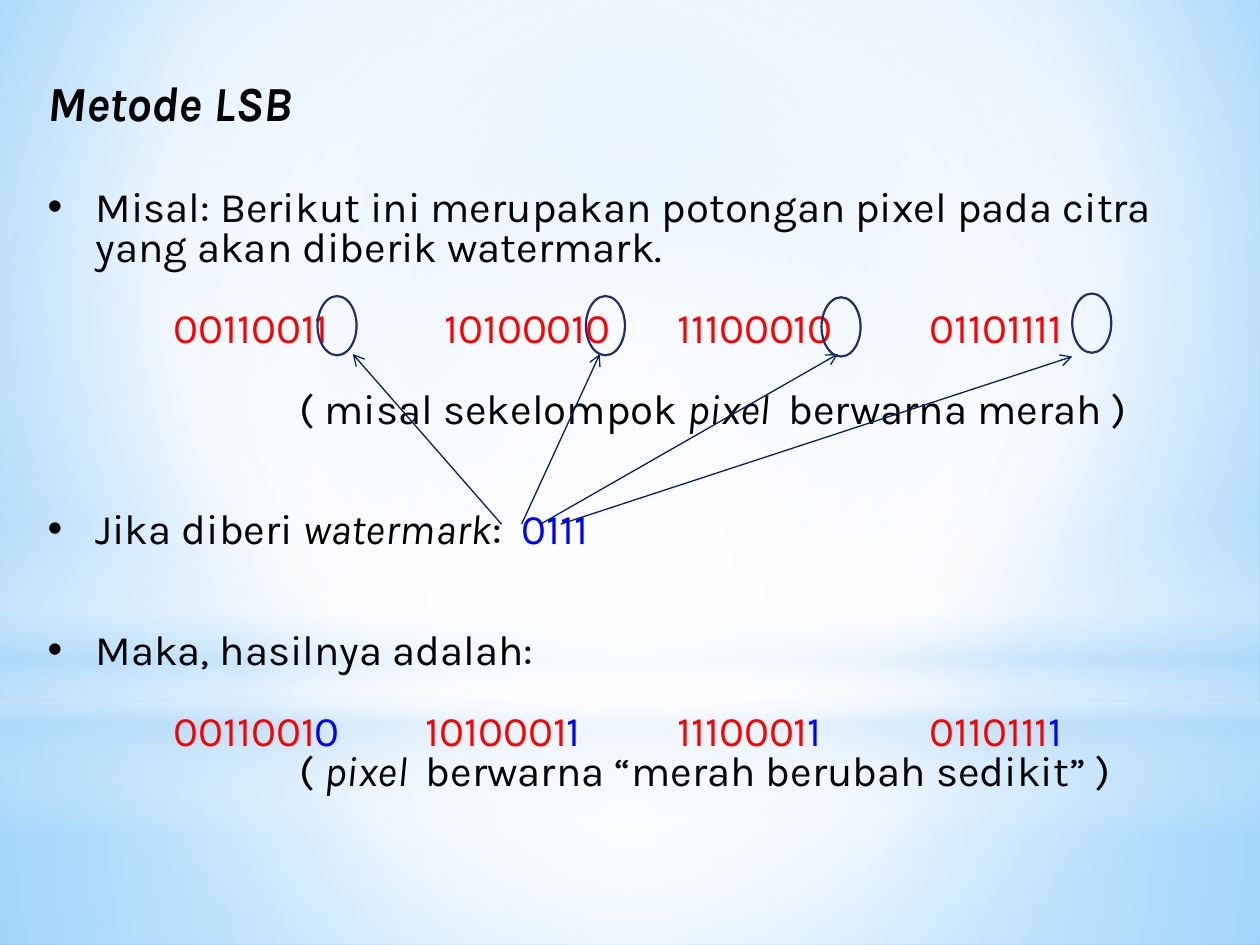
from dataclasses import dataclass, field
from typing import NamedTuple

from lxml import etree
from pptx import Presentation
from pptx import util as u
from pptx.dml.color import RGBColor
from pptx.enum import shapes, text
from pptx.oxml import ns

COLUMNS, ROWS = 10, 7.5
CELL = u.Inches(1)


@dataclass(frozen=True)
class Theme:
    font: str = "Karla"
    title: int = 28
    body: int = 24
    leading: float = 0.8
    title_gap: float = 33.5
    line_gap: float = 23
    black: str = "000000"
    red: str = "FF0000"
    blue: str = "0000FF"
    arrow: str = "002060"
    ring: str = "1F2E69"
    white: str = "FFFFFF"
    haze: str = "B4DCFA"


THEME = Theme()


class Area(NamedTuple):
    column: float
    row: float
    columns: float
    rows: float

    def lengths(self) -> list[int]:
        return [round(value * CELL) for value in self]


class Stop(NamedTuple):
    place: int
    color: str
    alpha: int = 100


class Glow(NamedTuple):
    area: Area
    stops: list[Stop]
    kind: shapes.MSO_SHAPE = shapes.MSO_SHAPE.RECTANGLE
    angle: int | None = None


class Span(NamedTuple):
    words: str
    color: str = THEME.black
    italic: bool = False
    bold: bool = False
    size: int = THEME.body


@dataclass
class Para:
    spans: list[Span]
    gap: float = 0
    leading: float = THEME.leading
    bullet: bool = False
    indent: float = 0
    tabs: list[float] = field(default_factory=list)


class Target(NamedTuple):
    ring: tuple[float, float]
    start: float
    tip: tuple[float, float]


def child(parent, tag: str, **attributes):
    values = {name: str(value) for name, value in attributes.items()}
    return etree.SubElement(parent, ns.qn(tag), values)


def apply(target, values: dict) -> None:
    for name, value in values.items():
        setattr(target, name, value)


def paint_gradient(element, stops: list[Stop], angle: int | None = None,
                   focus: tuple = (50, 50, 50, 50)) -> None:
    solid = next(element.iter(ns.qn("a:solidFill")))
    gradient = etree.Element(ns.qn("a:gradFill"), rotWithShape="1")
    stop_list = child(gradient, "a:gsLst")
    for stop in stops:
        mark = child(stop_list, "a:gs", pos=stop.place * 1000)
        color = child(mark, "a:srgbClr", val=stop.color)
        if stop.alpha < 100:
            child(color, "a:alpha", val=stop.alpha * 1000)
    if angle is None:
        sides = {side: share * 1000 for side, share in zip("ltrb", focus)}
        child(child(gradient, "a:path", path="circle"), "a:fillToRect", **sides)
    else:
        child(gradient, "a:lin", ang=angle * 60000, scaled=0)
    solid.getparent().replace(solid, gradient)


def draw_glow(page, glow: Glow) -> None:
    shape = page.shapes.add_shape(glow.kind, *glow.area.lengths())
    shape.shadow.inherit = False
    shape.line.fill.background()
    shape.fill.solid()
    paint_gradient(shape.element, glow.stops, glow.angle)


def write_para(para, item: Para) -> None:
    apply(para, {"line_spacing": item.leading, "space_before": u.Pt(item.gap)})
    props = para._p.get_or_add_pPr()
    if item.bullet:
        hang = u.Inches(0.38)
        props.set("marL", str(hang))
        props.set("indent", str(-hang))
        child(props, "a:buFont", typeface="Arial")
        child(props, "a:buChar", char="•")
    elif item.indent:
        props.set("marL", str(u.Inches(item.indent)))
        props.set("indent", "0")
    if item.tabs:
        tab_list = child(props, "a:tabLst")
        for tab in item.tabs:
            child(tab_list, "a:tab", pos=u.Inches(tab), algn="l")
    for span in item.spans:
        run = para.add_run()
        run.text = span.words
        apply(run.font, {"name": THEME.font, "size": u.Pt(span.size),
                         "bold": span.bold, "italic": span.italic})
        run.font.color.rgb = RGBColor.from_string(span.color)


def draw_text(page, area: Area, items: list[Para]) -> None:
    frame = page.shapes.add_textbox(*area.lengths()).text_frame
    apply(frame, {"word_wrap": True, "auto_size": text.MSO_AUTO_SIZE.NONE,
                  "vertical_anchor": text.MSO_ANCHOR.TOP})
    for index, item in enumerate(items):
        write_para(frame.add_paragraph() if index else frame.paragraphs[0], item)


def draw_arrow(page, target: Target) -> None:
    ends = [round(value * CELL) for value in (target.start, 4.16, *target.tip)]
    arrow = page.shapes.add_connector(shapes.MSO_CONNECTOR.STRAIGHT, *ends)
    arrow.line.width = u.Pt(0.75)
    arrow.line.color.rgb = RGBColor.from_string(THEME.arrow)
    child(arrow.line._get_or_add_ln(), "a:tailEnd", type="arrow")
    child(arrow.element.spPr, "a:effectLst")


def draw_ring(page, target: Target) -> None:
    area = Area(*target.ring, 0.31, 0.47)
    ring = page.shapes.add_shape(shapes.MSO_SHAPE.OVAL, *area.lengths())
    ring.shadow.inherit = False
    ring.fill.background()
    ring.line.width = u.Pt(1.25)
    ring.line.color.rgb = RGBColor.from_string(THEME.ring)


def result_spans(codes: list[str]) -> list[Span]:
    return [span for code in codes
            for span in (Span("\t" + code[:-1], THEME.red), Span(code[-1], THEME.blue))]


W, H = THEME.white, THEME.haze
GLOWS = [
    Glow(Area(0, 5.58, COLUMNS, 1.92), [Stop(0, W, 91), Stop(37, W, 76), Stop(100, H, 79)]),
    Glow(Area(0, 0, COLUMNS, 5.58), [Stop(0, W, 89), Stop(48, W, 62), Stop(100, H, 79)]),
    Glow(Area(0, 4.12, COLUMNS, 2.5), [Stop(0, W, 0), Stop(29, W, 30), Stop(45, H, 40),
                                       Stop(55, W, 26), Stop(65, H, 60), Stop(100, W, 0)], angle=90),
    Glow(Area(0, 1.75, COLUMNS, 5.58), [Stop(0, W), Stop(56, W, 0)], shapes.MSO_SHAPE.OVAL),
]
GAP = THEME.line_gap
PARAS = [
    Para([Span("Metode LSB", italic=True, bold=True, size=THEME.title)], leading=1.0),
    Para([Span("Misal: Berikut ini merupakan potongan pixel pada citra yang akan diberik watermark.")],
         THEME.title_gap, bullet=True),
    Para([Span("\t00110011\t10100010\t11100010\t01101111", THEME.red)], GAP, tabs=[1, 3.15, 5, 7]),
    Para([Span("( misal sekelompok "), Span("pixel  ", italic=True), Span("berwarna merah )")],
         GAP, indent=2),
    Para([Span("Jika diberi "), Span("watermark", italic=True), Span(":  "), Span("0111", THEME.blue)],
         2 * GAP, bullet=True),
    Para([Span("Maka, hasilnya adalah:")], 2 * GAP, bullet=True),
    Para(result_spans(["00110010", "10100011", "11100011", "01101111"]), GAP, tabs=[1, 3, 5, 7]),
    Para([Span("( "), Span("pixel  ", italic=True), Span("berwarna “merah berubah sedikit” )")], indent=2),
]
TARGETS = [
    Target((2.52, 2.35), 3.98, (2.8, 2.81)),
    Target((4.65, 2.35), 4.14, (4.76, 2.81)),
    Target((6.52, 2.36), 4.29, (6.65, 2.81)),
    Target((8.51, 2.33), 4.45, (8.51, 2.83)),
]


def main() -> None:
    deck = Presentation()
    apply(deck, {"slide_width": COLUMNS * CELL, "slide_height": round(ROWS * CELL)})
    page = deck.slides.add_slide(deck.slide_layouts[6])
    page.background.fill.solid()
    paint_gradient(page.element, [Stop(0, "9ED5FF"), Stop(60, W), Stop(100, "5BB9FF")],
                   focus=(20, 10, 20, 60))
    for glow in GLOWS:
        draw_glow(page, glow)
    draw_text(page, Area(0.28, 0.53, 9.37, 6.94), PARAS)
    for draw in (draw_arrow, draw_ring):
        for target in TARGETS:
            draw(page, target)
    deck.save("out.pptx")


if __name__ == "__main__":
    main()
